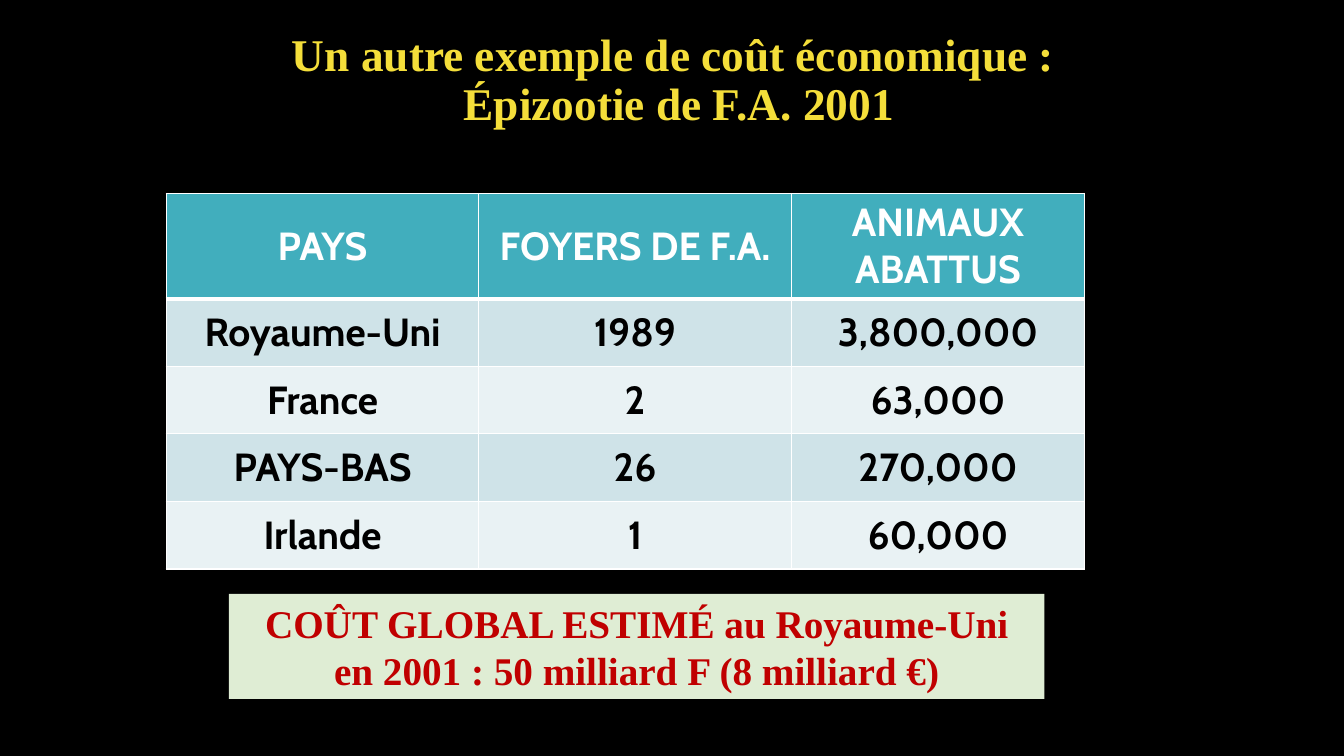
"""Build the slide on the economic cost of the 2001 F.A. epizootic."""
from pptx import Presentation
from pptx.dml.color import RGBColor
from pptx.enum import shapes, text
from pptx.oxml import ns, parse_xml
from pptx.util import Pt

TITLE = "Un autre exemple de coût économique : \vÉpizootie de F.A. 2001"
ROWS = [
    ("PAYS", "FOYERS DE F.A.", "ANIMAUX ABATTUS"),
    ("Royaume-Uni", "1989", "3,800,000"),
    ("France", "2", "63,000"),
    ("PAYS-BAS", "26", "270,000"),
    ("Irlande", "1", "60,000"),
]
COST = "COÛT GLOBAL ESTIMÉ au Royaume-Uni\nen 2001 : 50 milliard F (8 milliard €)"
WIDTHS = (223.2, 223.2, 209.5)
HEIGHTS = (75,) + (48.25,) * 4
HEAD, BANDS = "41AEBD", ("E9F2F4", "CFE3E8")
SERIF, SANS = "Times New Roman", "Cabin"


def color(code):
    return RGBColor.from_string(code)


def paint(item, code):
    item.fill.solid()
    item.fill.fore_color.rgb = color(code)


def style(frame, font, size, code):
    for par in frame.paragraphs:
        par.alignment = text.PP_ALIGN.CENTER
        for run in par.runs:
            run.font.name = font
            run.font.size = Pt(size)
            run.font.bold = True
            run.font.color.rgb = color(code)


def place(item, *box):
    item.left, item.top, item.width, item.height = map(Pt, box)


def edge(cell, row):
    props = cell._tc.get_or_add_tcPr()
    thick = {"T": row == 1, "B": row == 0}
    for side in "LRTB":
        width = Pt(3 if thick.get(side) else 1)
        props.append(parse_xml(
            f'<a:ln{side} {ns.nsdecls("a")} w="{width}"><a:solidFill>'
            f'<a:srgbClr val="FFFFFF"/></a:solidFill></a:ln{side}>'))


def add_grid(slide):
    grid = slide.shapes.add_table(
        len(ROWS), len(WIDTHS), Pt(118.8), Pt(138.2),
        Pt(sum(WIDTHS)), Pt(sum(HEIGHTS))).table
    for col, width in zip(grid.columns, WIDTHS):
        col.width = Pt(width)
    for i, row in enumerate(ROWS):
        grid.rows[i].height = Pt(HEIGHTS[i])
        for j, word in enumerate(row):
            cell = grid.cell(i, j)
            cell.text_frame.text = word
            cell.vertical_anchor = text.MSO_ANCHOR.MIDDLE
            style(cell.text_frame, SANS, 28, "000000" if i else "FFFFFF")
            edge(cell, i)
            paint(cell, BANDS[i % 2] if i else HEAD)


def main():
    deck = Presentation()
    deck.slide_width, deck.slide_height = Pt(960), Pt(540)
    slide = deck.slides.add_slide(deck.slide_layouts[5])
    paint(slide.background, "000000")

    title = slide.shapes.title
    place(title, 77, 23, 816, 70.6)
    title.text_frame.text = TITLE
    title.text_frame.vertical_anchor = text.MSO_ANCHOR.MIDDLE
    title.text_frame.paragraphs[0].line_spacing = 0.9
    style(title.text_frame, SERIF, 32.4, "F4DE3A")

    add_grid(slide)

    note = slide.shapes.add_shape(
        shapes.MSO_SHAPE.RECTANGLE, Pt(163.5), Pt(424.2), Pt(582.5), Pt(75))
    note.shadow.inherit = False
    paint(note, "DFEDD4")
    note.line.fill.background()
    note.text_frame.word_wrap = True
    note.text_frame.vertical_anchor = text.MSO_ANCHOR.TOP
    note.text_frame.text = COST
    style(note.text_frame, SERIF, 28, "C00000")
    deck.save("out.pptx")


if __name__ == "__main__":
    main()
